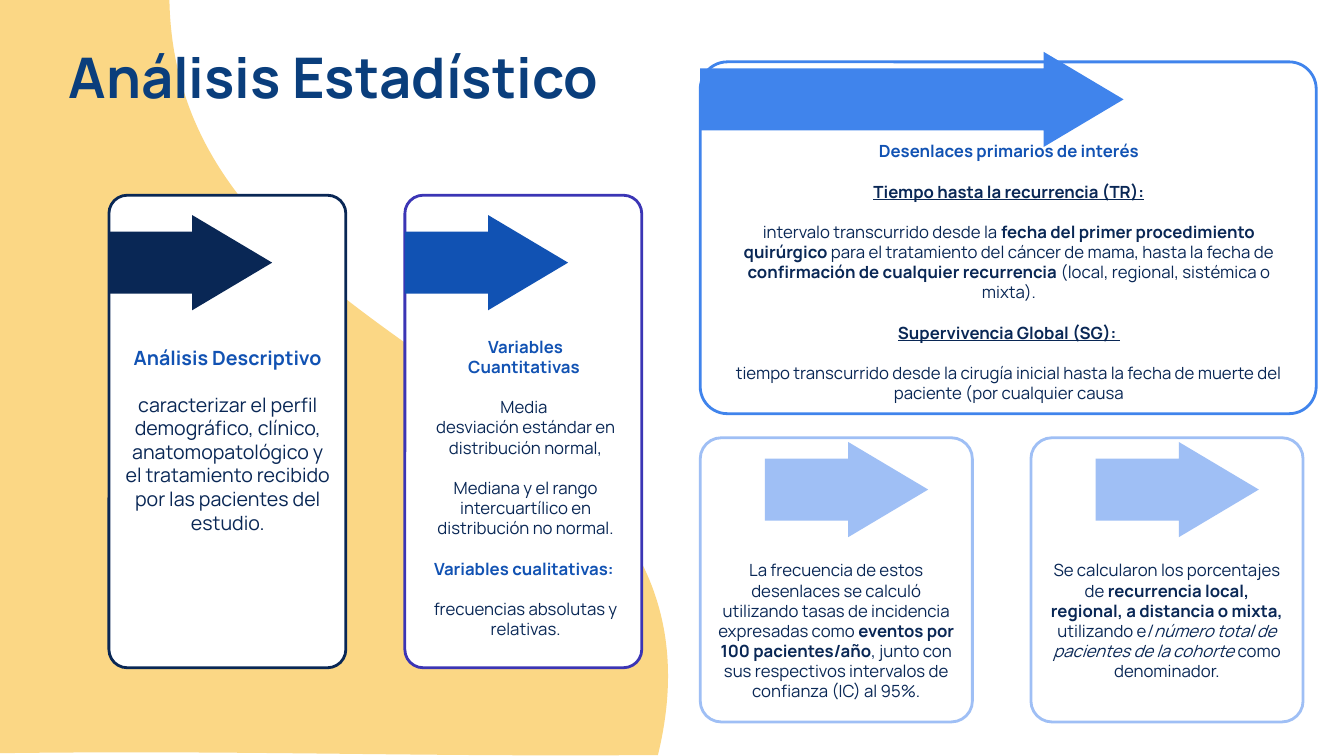
import dataclasses

import lxml.etree
import pptx
import pptx.dml.color
import pptx.enum.shapes
import pptx.enum.text
import pptx.oxml.ns
import pptx.util

Pt = pptx.util.Pt
SHAPES = pptx.enum.shapes.MSO_SHAPE
ALIGN = pptx.enum.text.PP_ALIGN
ANCHOR = pptx.enum.text.MSO_ANCHOR


@dataclasses.dataclass(frozen=True)
class Theme:
    font: str = "Manrope"
    title_size: float = 40
    large_size: float = 14
    body_size: float = 12
    line_height: float = 1.2
    title: str = "0A3E7C"
    sand: str = "FBD785"
    white: str = "FFFFFF"
    navy: str = "092755"
    blue: str = "1152B3"
    violet: str = "3B35B5"
    sky: str = "4084EC"
    pale: str = "9FBFF5"


THEME = Theme()


@dataclasses.dataclass(frozen=True)
class Entry:
    """A paragraph: spans are (text, style letters b, i, u) pairs."""
    spans: tuple
    color: str = THEME.navy
    gap: bool = True


def heading(text, style="b", color=THEME.blue):
    return Entry(((text, style),), color)


def plain(text, gap=True):
    return Entry(((text, ""),), gap=gap)


def rgb(value):
    return pptx.dml.color.RGBColor.from_string(value)


def paint(shape, fill, line=None):
    shape.shadow.inherit = False
    shape.fill.solid()
    shape.fill.fore_color.rgb = rgb(fill)
    if line:
        shape.line.color.rgb = rgb(line)
        shape.line.width = Pt(2)
    else:
        shape.line.fill.background()


def add_card(page, left, top, width, height, line):
    card = page.shapes.add_shape(SHAPES.ROUNDED_RECTANGLE,
                                 Pt(left), Pt(top), Pt(width), Pt(height))
    card.adjustments[0] = 0.077
    paint(card, THEME.white, line)
    return card


def add_arrow(page, left, top, color, width=116.6):
    arrow = page.shapes.add_shape(SHAPES.RIGHT_ARROW,
                                  Pt(left), Pt(top), Pt(width), Pt(68))
    arrow.adjustments[0] = 0.65
    arrow.adjustments[1] = 0.84
    paint(arrow, color)


def write(frame, entries, size=THEME.body_size):
    frame.word_wrap = True
    frame.vertical_anchor = ANCHOR.TOP
    for index, entry in enumerate(entries):
        para = frame.add_paragraph() if index else frame.paragraphs[0]
        para.alignment = ALIGN.CENTER
        if index and entry.gap:
            para.space_before = Pt(size * THEME.line_height)
        para.font.name = THEME.font
        para.font.size = Pt(size)
        para.font.color.rgb = rgb(entry.color)
        for text, style in entry.spans:
            span = para.add_run()
            span.text = text
            span.font.bold = "b" in style
            span.font.italic = "i" in style
            span.font.underline = "u" in style


def add_text(page, left, top, width, height, entries, size=THEME.body_size):
    box = page.shapes.add_textbox(Pt(left), Pt(top), Pt(width), Pt(height))
    write(box.text_frame, entries, size)


def bend_lines(outline):
    """Turn every three line segments of an outline into one cubic curve."""
    name = pptx.oxml.ns.qn
    lines = outline.findall(name("a:lnTo"))
    for start in range(0, len(lines), 3):
        curve = lxml.etree.Element(name("a:cubicBezTo"))
        lines[start].addprevious(curve)
        for line in lines[start:start + 3]:
            curve.append(line[0])
            outline.remove(line)


def add_backdrop(page):
    # Each row holds two control points and the end of a curve
    curves = ((0, 358), (-1.5, 177), (-1.5, -3),
              (40, -3.5), (84, -1), (121, -5),
              (121, 268), (536.5, 265.5), (470, 539.3),
              (291.5, 540.7), (178.5, 535.7), (0, 538))
    builder = page.shapes.build_freeform(0, Pt(538), scale=1)
    builder.add_line_segments([(Pt(x), Pt(y)) for x, y in curves], close=True)
    backdrop = builder.convert_to_shape()
    paint(backdrop, THEME.sand)
    outline = next(backdrop.element.iter(pptx.oxml.ns.qn("a:path")))
    bend_lines(outline)
    # The frame ends where the curve does, not at its control points
    backdrop.width = Pt(478.5)
    outline.set("w", str(Pt(478.5)))
    page.shapes.title.element.addprevious(backdrop.element)


def set_title(page, text):
    title = page.shapes.title
    title.left, title.top, title.width, title.height = map(Pt, (41.8, 31.7, 545, 51.1))
    title.text_frame.text = text
    title.text_frame.vertical_anchor = ANCHOR.MIDDLE
    para = title.text_frame.paragraphs[0]
    para.alignment = ALIGN.LEFT
    para.line_spacing = 0.9
    para.font.name = THEME.font
    para.font.size = Pt(THEME.title_size)
    para.font.bold = True
    para.font.color.rgb = rgb(THEME.title)


DESCRIPTIVE = (
    heading("Análisis Descriptivo"),
    plain("caracterizar el perfil demográfico, clínico, anatomopatológico y el "
          "tratamiento recibido por las pacientes del estudio."),
)
VARIABLES = (
    heading("Variables Cuantitativas "),
    plain("Media "),
    plain("desviación estándar en distribución normal,", gap=False),
    plain("Mediana y el rango intercuartílico en distribución no normal."),
    heading("Variables cualitativas: "),
    plain("frecuencias absolutas y relativas."),
)
OUTCOMES = (
    heading("Desenlaces primarios de interés"),
    heading("Tiempo hasta la recurrencia (TR):", "bu", THEME.navy),
    Entry((("intervalo transcurrido desde la", ""),
           (" fecha del primer procedimiento quirúrgico", "b"),
           (" para el tratamiento del cáncer de mama, hasta la fecha de ", ""),
           ("confirmación de cualquier recurrencia ", "b"),
           ("(local, regional, sistémica o mixta).", ""))),
    heading("Supervivencia Global (SG): ", "bu", THEME.navy),
    plain("tiempo transcurrido desde la cirugía inicial hasta la fecha de muerte "
          "del paciente (por cualquier causa"),
)
FREQUENCY = Entry((
    ("La frecuencia de estos desenlaces se calculó utilizando tasas de incidencia "
     "expresadas como", ""),
    (" eventos por 100 pacientes/año", "b"),
    (", junto con sus respectivos intervalos de confianza (IC) al 95%.", "")))
PERCENTAGES = Entry((
    ("Se calcularon los porcentajes de ", ""),
    ("recurrencia local, regional, a distancia o mixta,", "b"),
    (" utilizando e", ""),
    ("l número total de pacientes de la cohorte", "i"),
    (" como denominador.", "")))


def main():
    deck = pptx.Presentation()
    deck.slide_width, deck.slide_height = Pt(960), Pt(540)
    page = deck.slides.add_slide(deck.slide_layouts[5])
    add_backdrop(page)
    set_title(page, "Análisis Estadístico")

    # Tall cards on the left
    for left, line, color in ((77.8, THEME.navy, THEME.navy),
                              (289.2, THEME.violet, THEME.blue)):
        add_card(page, left, 139.5, 169.2, 337.5, line)
        add_arrow(page, left, 153.6, color)
    add_text(page, 81.4, 243.4, 162.7, 177.1, DESCRIPTIVE, THEME.large_size)
    add_text(page, 301.7, 236.9, 147.6, 239.8, VARIABLES)

    # Primary outcomes
    add_card(page, 500.2, 44.2, 440, 251.3, THEME.sky)
    add_arrow(page, 500.2, 37, THEME.sky, width=302.4)
    add_text(page, 506.9, 97.2, 427.7, 181.4, OUTCOMES)

    # Calculation cards
    for left, entry in ((500.2, FREQUENCY), (736.4, PERCENTAGES)):
        card = add_card(page, left, 312.7, 194.4, 203, THEME.pale)
        card.text_frame.margin_top = Pt(83)
        write(card.text_frame, (entry,))
        add_arrow(page, left + 46.2, 315.7, THEME.pale)

    deck.save("out.pptx")


if __name__ == "__main__":
    main()
